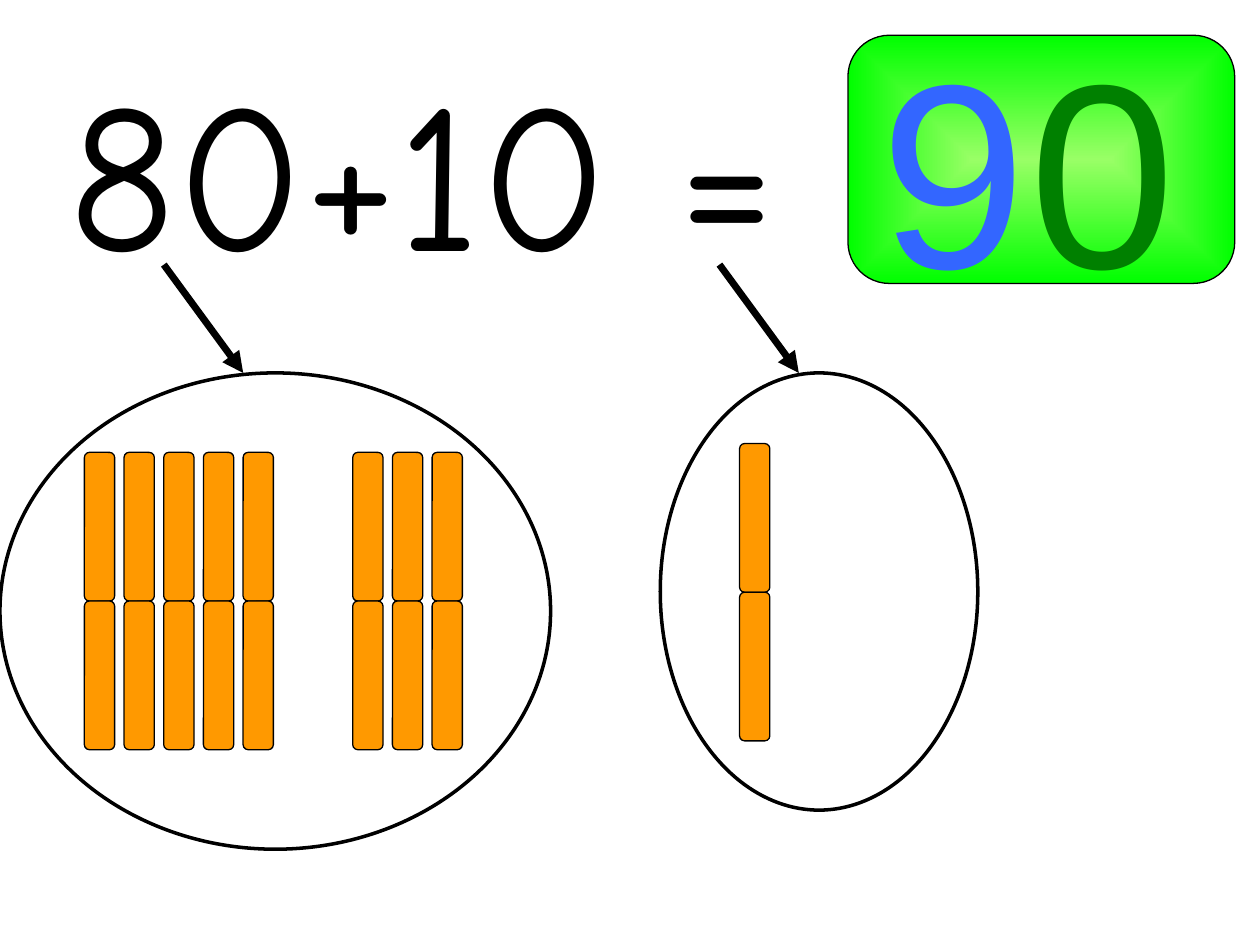
from lxml import etree
from pptx import Presentation
from pptx.dml.color import RGBColor
from pptx.enum.shapes import MSO_CONNECTOR as Connector, MSO_SHAPE as Shape
from pptx.enum.text import MSO_AUTO_SIZE as AutoSize, PP_ALIGN as Align
from pptx.oxml.ns import qn
from pptx.util import Inches, Pt

COLORS = {
    "ink": "000000",
    "rod": "FF9900",
    "glow": "99FF66",
    "green": "00FF00",
    "tens": "3366FF",
    "ones": "008000",
}
SUM = ("80+10 =", (0.12, 0.28, 6.46, 2.12), 120, "Comic Neue", "ink", Align.CENTER)
ANSWER = [
    ("9", (6.89, 0, 1.18, 2.6), 150, "Arial", "tens", Align.LEFT),
    ("0", (8.07, 0, 1.18, 2.6), 150, "Arial", "ones", Align.LEFT),
]
ANSWER_PANEL = (6.73, 0.28, 3.07, 1.97)
ROD_SETS = [(0.67, 3.59, 5), (2.8, 3.59, 3), (5.87, 3.52, 1)]
ROD_WIDTH, ROD_HALF, ROD_PITCH = 0.24, 1.18, 0.315
CIRCLES = [(0, 2.96, 4.37, 3.78), (5.24, 2.96, 2.52, 3.47)]
ARROW_STARTS = [1.3, 5.71]
ARROW_TOP, ARROW_RUN, ARROW_DROP = 2.1, 0.63, 0.86


def color(name):
    return RGBColor.from_string(COLORS[name])


def add_outlined(shapes, preset, box, line_width, fill=None):
    shape = shapes.add_shape(preset, *map(Inches, box))
    shape.shadow.inherit = False
    shape.line.color.rgb = color("ink")
    shape.line.width = Pt(line_width)
    if fill:
        shape.fill.solid()
        shape.fill.fore_color.rgb = color(fill)
    else:
        shape.fill.background()
    return shape


def add_panel(shapes):
    panel = add_outlined(shapes, Shape.ROUNDED_RECTANGLE, ANSWER_PANEL, 0.75)
    panel.fill.gradient()
    for stop, name in zip(panel.fill.gradient_stops, ("glow", "green")):
        stop.color.rgb = color(name)
    gradient = panel._element.spPr.find(qn("a:gradFill"))
    gradient.remove(gradient.find(qn("a:lin")))
    shading = etree.SubElement(gradient, qn("a:path"), path="shape")
    center = dict.fromkeys("ltrb", "50000")
    etree.SubElement(shading, qn("a:fillToRect"), **center)


def add_text(shapes, text, box, size, font, ink, align):
    frame = shapes.add_textbox(*map(Inches, box)).text_frame
    frame.word_wrap = True
    frame.auto_size = AutoSize.SHAPE_TO_FIT_TEXT
    frame.text = text
    paragraph = frame.paragraphs[0]
    paragraph.alignment = align
    paragraph.space_before = Pt(0)
    before = paragraph._p.pPr.find(qn("a:spcBef"))
    before.remove(before[0])
    etree.SubElement(before, qn("a:spcPct"), val="50000")
    style = paragraph.runs[0].font
    style.size, style.name = Pt(size), font
    style.color.rgb = color(ink)


def add_rods(shapes, left, top, count):
    for rod in range(count):
        halves = shapes.add_group_shape().shapes
        for half in range(2):
            box = (left + rod * ROD_PITCH, top + half * ROD_HALF, ROD_WIDTH, ROD_HALF)
            add_outlined(halves, Shape.ROUNDED_RECTANGLE, box, 0.75, "rod")


def add_arrow(shapes, left):
    ends = (left, ARROW_TOP, left + ARROW_RUN, ARROW_TOP + ARROW_DROP)
    arrow = shapes.add_connector(Connector.STRAIGHT, *map(Inches, ends))
    arrow.line.color.rgb = color("ink")
    arrow.line.width = Pt(4)
    etree.SubElement(arrow.line._get_or_add_ln(), qn("a:tailEnd"), type="triangle")
    etree.SubElement(arrow._element.spPr, qn("a:effectLst"))


def main():
    deck = Presentation()
    deck.slide_width, deck.slide_height = Inches(10), Inches(7.5)
    shapes = deck.slides.add_slide(deck.slide_layouts[6]).shapes
    add_panel(shapes)
    for label in (SUM, *ANSWER):
        add_text(shapes, *label)
    for left in ARROW_STARTS:
        add_arrow(shapes, left)
    for circle in CIRCLES:
        add_outlined(shapes, Shape.OVAL, circle, 2)
    for rod_set in ROD_SETS:
        add_rods(shapes, *rod_set)
    deck.save("out.pptx")


if __name__ == "__main__":
    main()
